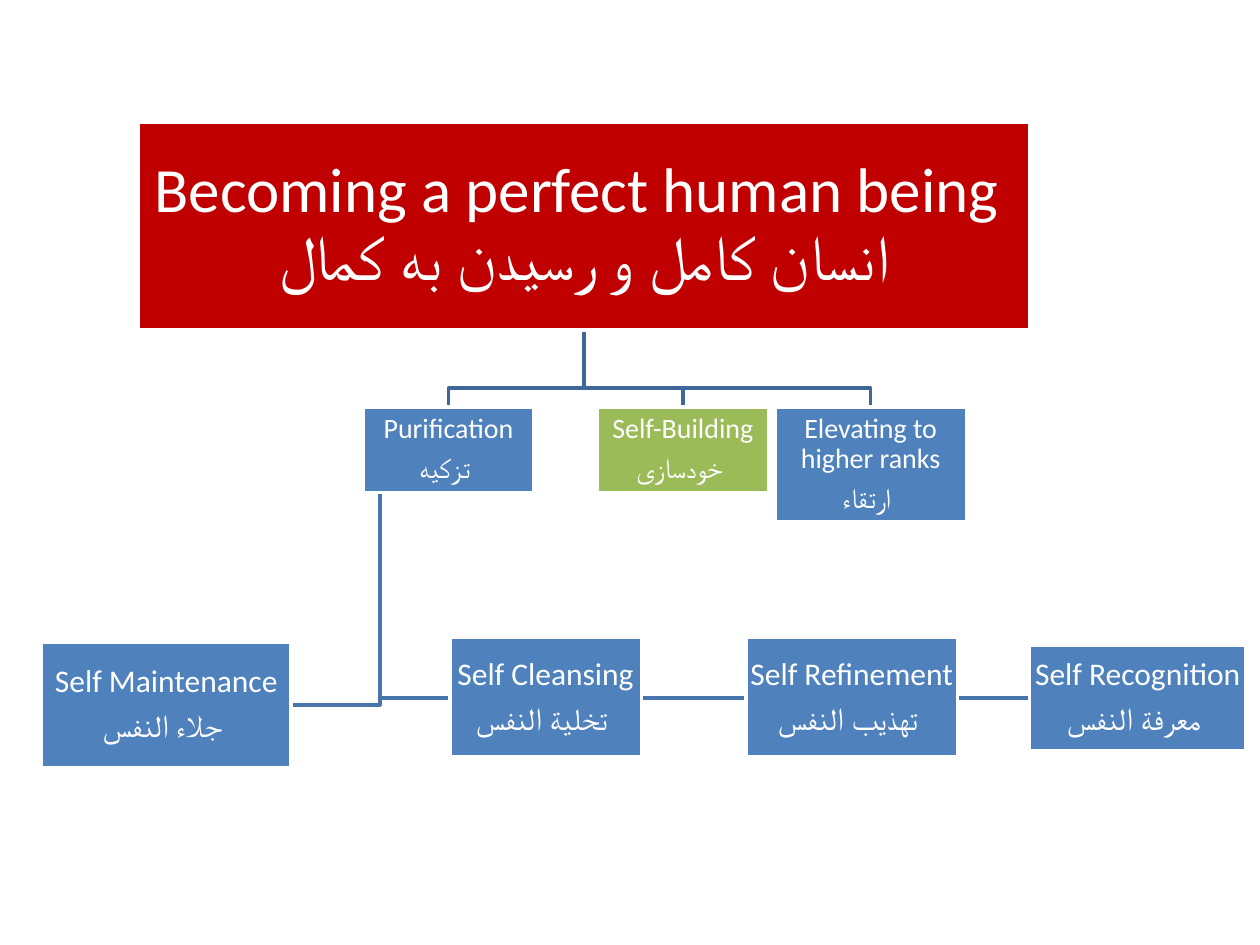
from pptx import Presentation
from pptx import util as u
from pptx.dml.color import RGBColor
from pptx.enum import shapes, text

COLORS = {
    "title": "C00000",
    "blue": "4F81BD",
    "green": "9BBB59",
    "white": "FFFFFF",
    "upper_line": "3F6797",
    "lower_line": "4875AC",
}
TITLE = (1.1, 0.97, 7.07, 1.65)
TITLE_TEXT = "Becoming a perfect human being \vانسان کامل و رسیدن به کمال"
BRANCHES = [
    ((2.88, 3.23, 1.36, 0.68), "blue", ["Purification", "تزکیه "]),
    ((4.74, 3.23, 1.36, 0.68), "green", ["Self-Building", "خودسازی "]),
    ((6.15, 3.23, 1.52, 0.91), "blue", ["Elevating to higher ranks", "ارتقاء "]),
]
STEPS = [
    ((3.57, 5.06, 1.52, 0.95), ["Self Cleansing", "تخلیة النفس "]),
    ((5.92, 5.06, 1.68, 0.95), ["Self Refinement", "تهذیب النفس "]),
    ((8.17, 5.12, 1.72, 0.84), ["Self Recognition", "معرفة النفس "]),
    ((0.33, 5.1, 1.98, 0.99), ["Self Maintenance", "جلاء النفس "]),
]


def color(name):
    return RGBColor.from_string(COLORS[name])


def add_elbow(page, points, line_color):
    start, *rest = [(u.Inches(x), u.Inches(y)) for x, y in points]
    builder = page.shapes.build_freeform(*start)
    builder.add_line_segments(rest, close=False)
    elbow = builder.convert_to_shape()
    elbow.shadow.inherit = False
    elbow.fill.background()
    elbow.line.color.rgb = color(line_color)
    elbow.line.width = u.Pt(2)


def add_box(page, place, fill, lines, size, inset=0.01):
    box = page.shapes.add_shape(
        shapes.MSO_SHAPE.RECTANGLE, *(u.Inches(value) for value in place))
    box.shadow.inherit = False
    box.fill.solid()
    box.fill.fore_color.rgb = color(fill)
    box.line.color.rgb = color("white")
    box.line.width = u.Pt(2)
    frame = box.text_frame
    frame.word_wrap = True
    frame.vertical_anchor = text.MSO_ANCHOR.MIDDLE
    frame.margin_left = frame.margin_right = u.Inches(inset)
    frame.margin_top = frame.margin_bottom = u.Inches(inset)
    for index, line in enumerate(lines):
        para = frame.add_paragraph() if index else frame.paragraphs[0]
        para.text = line
        para.alignment = text.PP_ALIGN.CENTER
        para.line_spacing = 0.9
        para.space_after = u.Pt(round(size * 0.35, 1))
        para.font.name = "Calibri"
        para.font.size = u.Pt(size)
        para.font.color.rgb = color("white")


def connect_branches(page):
    left, top, width, height = TITLE
    root_x, root_y, bar_y = left + width / 2, top + height, 3.08
    for (x, y, w, _), _, _ in BRANCHES:
        center = x + w / 2
        add_elbow(page, [(root_x, root_y), (root_x, bar_y), (center, bar_y),
                         (center, y)], "upper_line")


def connect_steps(page):
    left, top, width, height = BRANCHES[0][0]
    trunk_x, trunk_y = left + width / 10, top + height
    for (x, y, w, h), _ in STEPS:
        middle = y + h / 2
        near_edge = x if x > trunk_x else x + w
        add_elbow(page, [(trunk_x, trunk_y), (trunk_x, middle),
                         (near_edge, middle)], "lower_line")


def main():
    deck = Presentation()
    deck.slide_width, deck.slide_height = u.Inches(10), u.Inches(7.5)
    page = deck.slides.add_slide(deck.slide_layouts[6])
    connect_branches(page)
    connect_steps(page)
    add_box(page, TITLE, "title", [TITLE_TEXT], 36, inset=0.03)
    for place, fill, lines in BRANCHES:
        add_box(page, place, fill, lines, 16)
    for place, lines in STEPS:
        add_box(page, place, "blue", lines, 18)
    deck.save("out.pptx")


if __name__ == "__main__":
    main()
